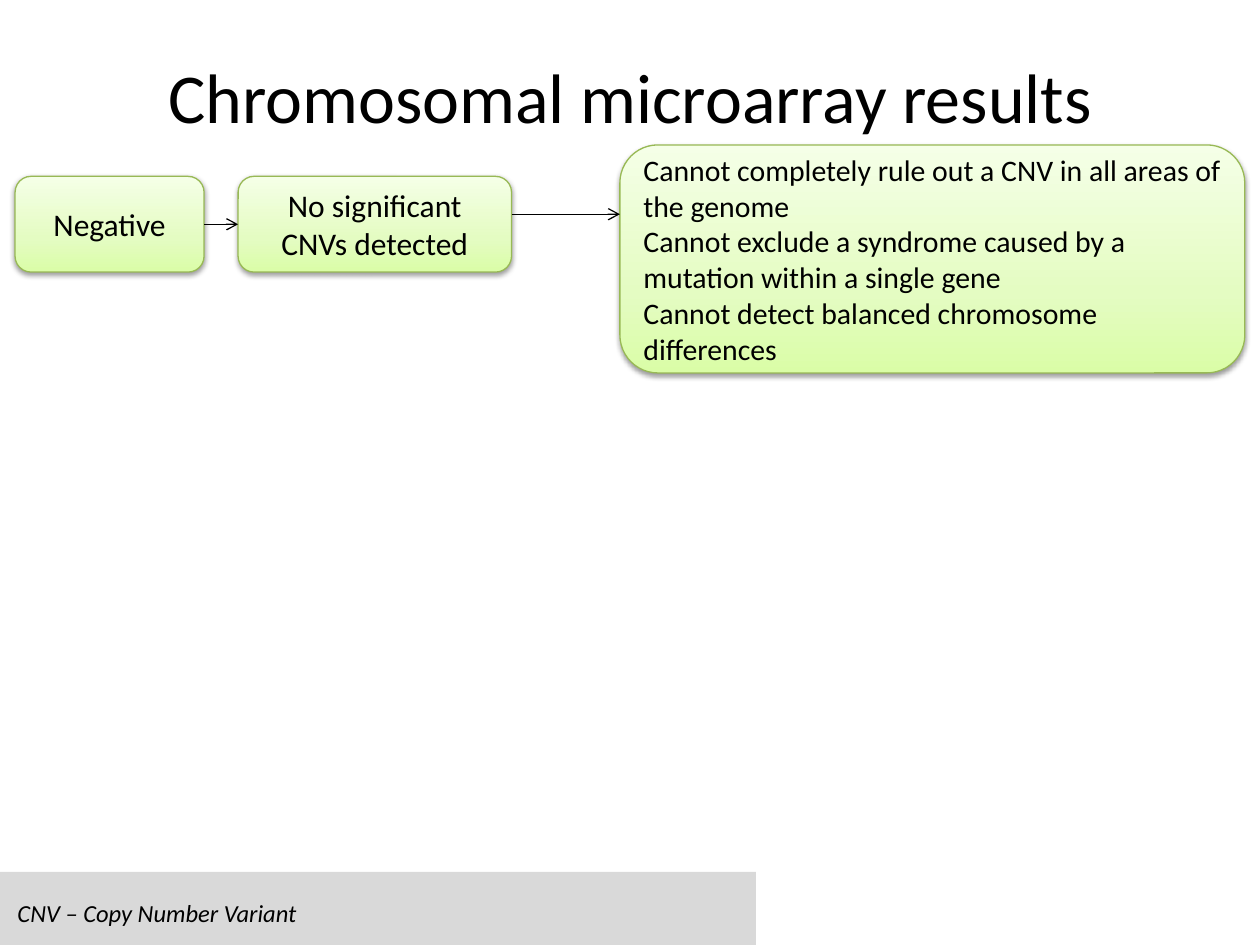
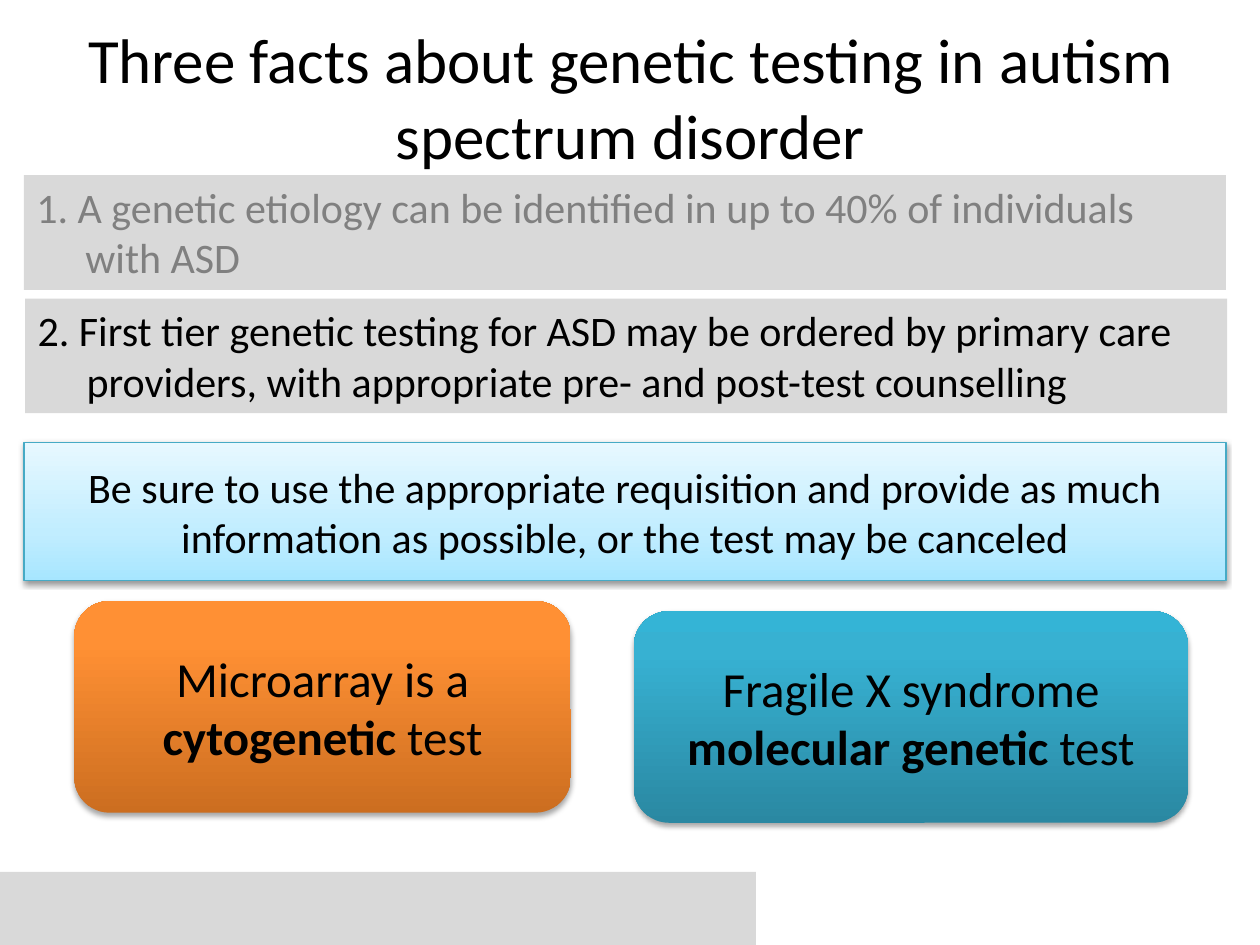
from dataclasses import dataclass

from lxml.etree import SubElement
from pptx import Presentation
from pptx.dml.color import RGBColor
from pptx.enum.shapes import MSO_CONNECTOR, MSO_SHAPE
from pptx.enum.text import MSO_ANCHOR, MSO_AUTO_SIZE, PP_ALIGN
from pptx.oxml.ns import qn
from pptx.util import Emu, Inches, Pt

COLORS = {
    "text": "000000",
    "muted": "808080",
    "band": "D9D9D9",
    "green_line": "98B955",
    "blue_line": "46AAC5",
}
FONT = "Calibri"
TITLE_ONLY = 5
TOP, LEFT, BOTTOM, RIGHT = range(4)


@dataclass(frozen=True)
class Look:
    """Upward gradient as (percent, colour) stops, with outline and shadow."""
    stops: tuple[tuple[int, str], ...]
    line: str | None = None
    shadow_alpha: int = 38
    shadow_distance: float = 1.6


GREEN = Look(((0, "DAFDA7"), (35, "E4FCC2"), (100, "F5FFE7")), "green_line")
PALE_BLUE = Look(((0, "A7E6FF"), (35, "C1EDFF"), (100, "E7F8FF")), "blue_line")
ORANGE = Look(((0, "CC6E20"), (80, "FF9034"), (100, "FF9136")), None, 35, 1.8)
TEAL = Look(((0, "2A88A2"), (80, "37B1D2"), (100, "34B4D6")), None, 35, 1.8)


@dataclass(frozen=True)
class Box:
    left: float
    top: float
    width: float
    height: float
    text: str = ""
    look: Look | None = None
    size: int = 24
    color: str = "text"
    kind: MSO_SHAPE = MSO_SHAPE.ROUNDED_RECTANGLE
    align: PP_ALIGN = PP_ALIGN.CENTER
    anchor: MSO_ANCHOR = MSO_ANCHOR.MIDDLE
    hanging: float = 0

    @property
    def frame(self) -> tuple[Emu, ...]:
        return tuple(Inches(value) for value in (self.left, self.top, self.width, self.height))


def write_text(shape, text: str, *, size: int, color: str = "text", italic: bool = False,
               align: PP_ALIGN = PP_ALIGN.LEFT, anchor: MSO_ANCHOR = MSO_ANCHOR.TOP,
               hanging: float = 0) -> None:
    """Write one paragraph per line; parts between ** are bold."""
    text_frame = shape.text_frame
    text_frame.word_wrap = True
    text_frame.auto_size = MSO_AUTO_SIZE.NONE
    text_frame.vertical_anchor = anchor
    for number, line in enumerate(text.split("\n")):
        paragraph = text_frame.add_paragraph() if number else text_frame.paragraphs[0]
        paragraph.alignment = align
        if hanging:
            properties = paragraph._p.get_or_add_pPr()
            properties.set("marL", str(Inches(hanging)))
            properties.set("indent", str(-Inches(hanging)))
        for part_number, part in enumerate(line.split("**")):
            run = paragraph.add_run()
            run.text = part
            run.font.name = FONT
            run.font.size = Pt(size)
            run.font.bold = part_number % 2 == 1
            run.font.italic = italic
            run.font.color.rgb = RGBColor.from_string(COLORS[color])


def apply_look(shape, look: Look) -> None:
    shape.fill.gradient()
    shape.fill.gradient_angle = 90
    properties = shape._element.spPr
    stop_list = properties.find(qn("a:gradFill")).find(qn("a:gsLst"))
    stop_list.clear()
    for percent, color in look.stops:
        stop = SubElement(stop_list, qn("a:gs"), pos=str(percent * 1000))
        SubElement(stop, qn("a:srgbClr"), val=color)

    if look.line:
        shape.line.color.rgb = RGBColor.from_string(COLORS[look.line])
        shape.line.width = Pt(0.75)

    shadow = SubElement(properties.find(qn("a:effectLst")), qn("a:outerShdw"),
                        blurRad=str(Pt(3.1)), dist=str(Pt(look.shadow_distance)),
                        dir="5400000", rotWithShape="0")
    shadow_color = SubElement(shadow, qn("a:srgbClr"), val="000000")
    SubElement(shadow_color, qn("a:alpha"), val=str(look.shadow_alpha * 1000))


def add_box(slide, box: Box):
    shape = slide.shapes.add_shape(box.kind, *box.frame)
    shape.shadow.inherit = False
    shape.line.fill.background()
    if box.look:
        apply_look(shape, box.look)
    else:
        shape.fill.solid()
        shape.fill.fore_color.rgb = RGBColor.from_string(COLORS["band"])
    if box.text:
        write_text(shape, box.text, size=box.size, color=box.color, align=box.align,
                   anchor=box.anchor, hanging=box.hanging)
    return shape


def add_arrow(slide, left: float, right: float, y: float):
    arrow = slide.shapes.add_connector(MSO_CONNECTOR.STRAIGHT, Inches(left), Inches(y),
                                       Inches(right), Inches(y))
    arrow.line.color.rgb = RGBColor.from_string(COLORS["text"])
    arrow.line.width = Pt(0.75)
    SubElement(arrow.line._get_or_add_ln(), qn("a:tailEnd"), type="arrow")
    SubElement(arrow._element.spPr, qn("a:effectLst"))
    return arrow


def add_titled_slide(presentation, title: Box):
    """Add a slide with its footer band and title."""
    slide = presentation.slides.add_slide(presentation.slide_layouts[TITLE_ONLY])
    add_box(slide, Box(0, 6.92, 6, 0.58, kind=MSO_SHAPE.RECTANGLE))
    placeholder = slide.shapes.title
    placeholder.left, placeholder.top, placeholder.width, placeholder.height = title.frame
    write_text(placeholder, title.text, size=title.size, align=title.align, anchor=title.anchor)
    return slide


def add_results_slide(presentation) -> None:
    slide = add_titled_slide(
        presentation, Box(0.5, 0.13, 9, 1.25, "Chromosomal microarray results", size=40))
    abbreviation = slide.shapes.add_textbox(Inches(0.04), Inches(7.08), Inches(3.42), Inches(0.34))
    write_text(abbreviation, "CNV – Copy Number Variant", size=14, italic=True)

    result = Box(0.12, 1.4, 1.5, 0.76, "Negative", GREEN, 18)
    meaning = Box(1.89, 1.4, 2.17, 0.76, "No significant CNVs detected", GREEN, 18)
    limits = Box(4.92, 1.15, 4.96, 1.81,
                 "Cannot completely rule out a CNV in all areas of the genome\n"
                 "Cannot exclude a syndrome caused by a mutation within a single gene\n"
                 "Cannot detect balanced chromosome differences",
                 GREEN, 17, align=PP_ALIGN.LEFT)
    result_shape, meaning_shape, _ = [add_box(slide, box) for box in (result, meaning, limits)]

    arrow = add_arrow(slide, result.left + result.width, meaning.left, 1.78)
    arrow.begin_connect(result_shape, RIGHT)
    arrow.end_connect(meaning_shape, LEFT)
    add_arrow(slide, meaning.left + meaning.width, limits.left, 1.7)


def add_facts_slide(presentation) -> None:
    slide = add_titled_slide(
        presentation,
        Box(0.43, 0.14, 9.15, 1.25,
            "Three facts about genetic testing in autism spectrum disorder", size=36))
    facts = (
        (0.19, 1.39, "muted",
         "1. A genetic etiology can be identified in up to 40% of individuals with ASD"),
        (0.2, 2.37, "text",
         "2. First tier genetic testing for ASD may be ordered by primary care providers, "
         "with appropriate pre- and post-test counselling"),
    )
    for left, top, color, text in facts:
        add_box(slide, Box(left, top, 9.54, 0.91, text, color=color, kind=MSO_SHAPE.RECTANGLE,
                           align=PP_ALIGN.LEFT, anchor=MSO_ANCHOR.TOP, hanging=0.39))

    advice = Box(0.19, 3.51, 9.54, 1.1,
                 "Be sure to use the appropriate requisition and provide as much information "
                 "as possible, or the test may be canceled",
                 PALE_BLUE, kind=MSO_SHAPE.RECTANGLE)
    microarray = Box(0.59, 4.77, 3.94, 1.68, "Microarray is a **cytogenetic** test", ORANGE, 28)
    fragile_x = Box(5.03, 4.85, 4.4, 1.68,
                    "Fragile X syndrome **molecular genetic** test", TEAL, 28)
    for box in (advice, microarray, fragile_x):
        add_box(slide, box)


def main() -> None:
    presentation = Presentation()
    presentation.slide_width = Inches(10)
    presentation.slide_height = Inches(7.5)
    add_results_slide(presentation)
    add_facts_slide(presentation)
    presentation.save("out.pptx")


if __name__ == "__main__":
    main()
